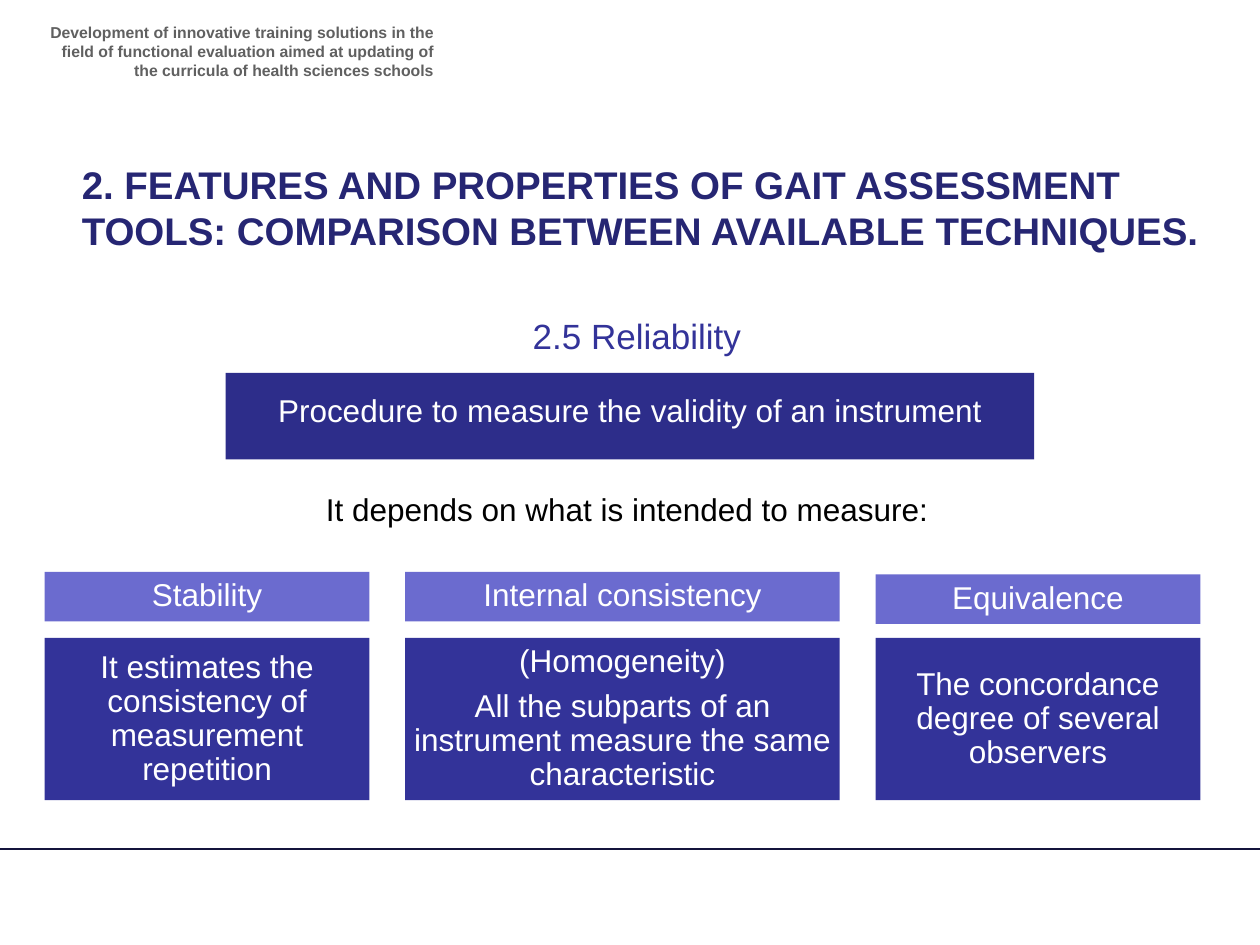
from lxml import etree
from pptx import Presentation
from pptx.dml.color import RGBColor
from pptx.enum.shapes import MSO_CONNECTOR, MSO_SHAPE
from pptx.enum.text import MSO_ANCHOR, PP_ALIGN
from pptx.oxml.ns import qn
from pptx.util import Cm, Pt

LEFT, CENTER, RIGHT = PP_ALIGN.LEFT, PP_ALIGN.CENTER, PP_ALIGN.RIGHT
MIDDLE = MSO_ANCHOR.MIDDLE
RECTANGLE = MSO_SHAPE.RECTANGLE
STRAIGHT = MSO_CONNECTOR.STRAIGHT

FONT = "Arial"
WHITE, BLACK, GREY = "FFFFFF", "000000", "606060"
NAVY, INDIGO, DEEP, LILAC = "262673", "333399", "2D2D8A", "6B6BCF"
RULE = "14143C"

COLUMNS = [
    (6.55, 11.53, "Stability",
     ["It estimates the consistency of measurement repetition"]),
    (8.76, 11.53, "Internal consistency",
     ["(Homogeneity)",
      "All the subparts of an instrument measure the same characteristic"]),
    (6.55, 11.58, "Equivalence",
     ["The concordance degree of several observers"]),
]
COLUMN_LEFT, COLUMN_GAP = 0.9, 0.72
HEADING_HEIGHT = 1
BODY_TOP, BODY_HEIGHT = 12.86, 3.27


def rgb(color):
    return RGBColor.from_string(color)


def write(tf, lines, size, color, align, bold=False):
    tf.word_wrap = True
    tf.text = "\n".join(lines)
    for p in tf.paragraphs:
        p.alignment = align
        for r in p.runs:
            r.font.name = FONT
            r.font.size = Pt(size)
            r.font.bold = bold
            r.font.color.rgb = rgb(color)


def add_text(s, left, top, width, height, text, size, color,
             align=LEFT, bold=False):
    box = s.shapes.add_textbox(Cm(left), Cm(top), Cm(width), Cm(height))
    write(box.text_frame, [text], size, color, align, bold)


def add_box(s, left, top, width, height, lines, fill,
            line_spacing=0.9, space_after=6):
    sp = s.shapes.add_shape(RECTANGLE, Cm(left), Cm(top), Cm(width), Cm(height))
    sp.shadow.inherit = False
    sp.fill.solid()
    sp.fill.fore_color.rgb = rgb(fill)
    sp.line.fill.background()
    tf = sp.text_frame
    tf.vertical_anchor = MIDDLE
    tf.margin_left = tf.margin_right = Cm(0.03)
    tf.margin_top = tf.margin_bottom = Cm(0.03)
    write(tf, lines, 18, WHITE, CENTER)
    for p in tf.paragraphs:
        p.line_spacing = line_spacing
        p.space_after = Pt(space_after)


def add_rule(s, left, right, y):
    rule = s.shapes.add_connector(STRAIGHT, Cm(left), Cm(y), Cm(right), Cm(y))
    rule.line.color.rgb = rgb(RULE)
    rule.line.width = Pt(1)
    etree.SubElement(rule._element.spPr, qn("a:effectLst"))


def add_columns(s):
    left = COLUMN_LEFT
    for width, top, heading, body in COLUMNS:
        add_box(s, left, top, width, HEADING_HEIGHT, [heading], LILAC)
        add_box(s, left, BODY_TOP, width, BODY_HEIGHT, body, INDIGO)
        left += width + COLUMN_GAP


def main():
    prs = Presentation()
    prs.slide_width, prs.slide_height = Cm(25.4), Cm(19.05)
    s = prs.slides.add_slide(prs.slide_layouts[6])
    add_rule(s, -0.13, 25.4, 17.12)
    add_text(s, 0.71, 0.33, 8.28, 1.19,
             "Development of innovative training solutions in the ﬁeld of "
             "functional evaluation aimed at updating of the curricula of "
             "health sciences schools", 9, GREY, RIGHT, True)
    add_text(s, 1.4, 3.12, 23.09, 2.13,
             "2. FEATURES AND PROPERTIES OF GAIT ASSESSMENT TOOLS: "
             "COMPARISON BETWEEN AVAILABLE TECHNIQUES.", 22, NAVY, bold=True)
    add_text(s, 10.49, 6.22, 5, 1.96, "2.5 Reliability", 20, INDIGO)
    add_box(s, 4.55, 7.52, 16.3, 1.74,
            ["Procedure to measure the validity of an instrument"], DEEP,
            line_spacing=Pt(14), space_after=0)
    add_text(s, 6.32, 9.75, 12.75, 1.02,
             "It depends on what is intended to measure:", 18, BLACK)
    add_columns(s)
    prs.save("out.pptx")


if __name__ == "__main__":
    main()
